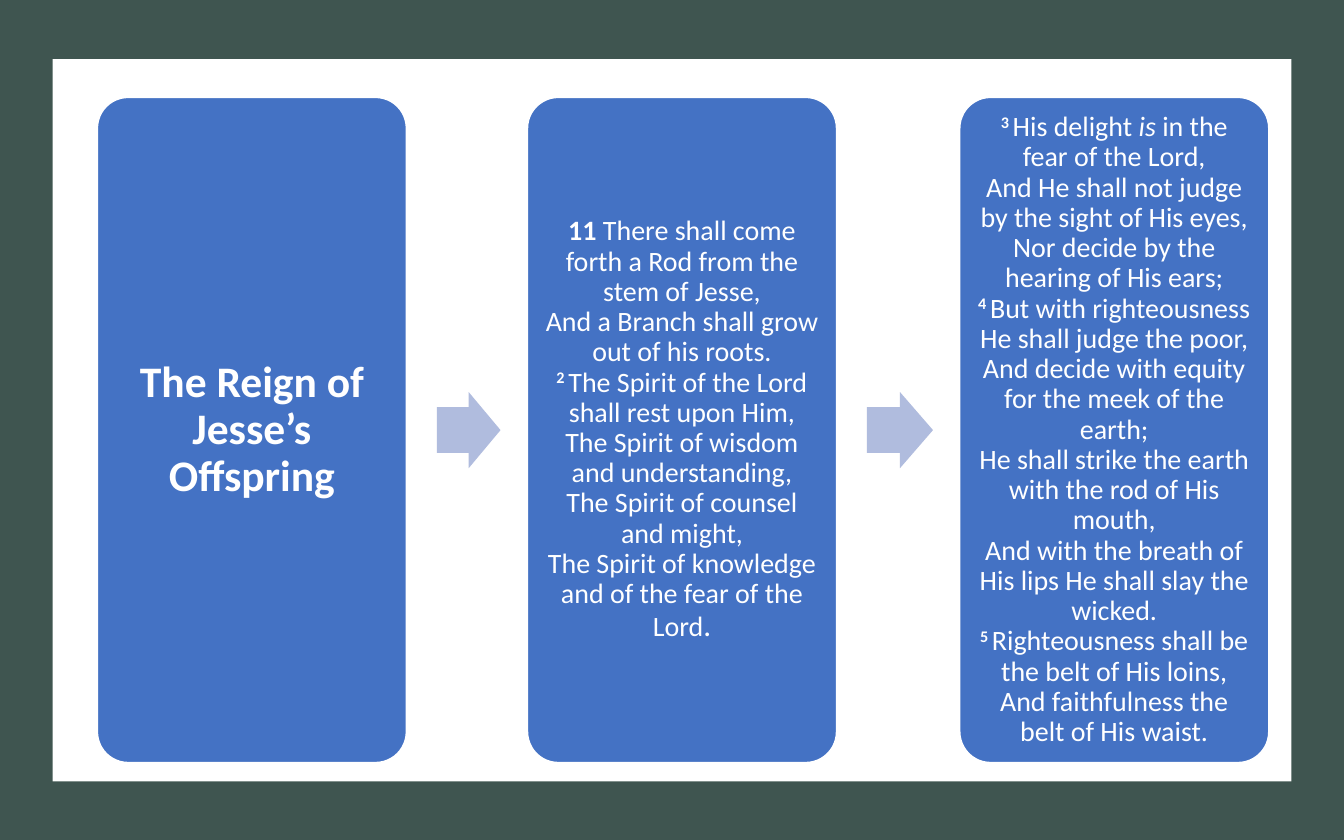
import pptx
import pptx.util
import pptx.dml.color
import pptx.enum.shapes
import pptx.enum.text

Pt = pptx.util.Pt
SHAPE = pptx.enum.shapes.MSO_SHAPE
COLORS = {"frame": "3F5550", "white": "FFFFFF", "card": "4472C4", "arrow": "B0BCDE"}
CARD_LEFTS = (62.6, 339.1, 617)
CARD_TOP, CARD_W, CARD_H = 62.6, 198.7, 427.7
ARROWS = ((280.8, 41), (557.3, 42.5))
TITLE = "The Reign of Jesse’s Offspring"
VERSES_1_2 = (
    ("11 ", {"bold": True}),
    ("There shall come forth a Rod from the stem of Jesse,\n"
     "And a Branch shall grow out of his roots.\n", {}),
    ("2 ", {"bold": True, "raised": True}),
    ("The Spirit of the Lord shall rest upon Him,\n"
     "The Spirit of wisdom and understanding,\n"
     "The Spirit of counsel and might,\n"
     "The Spirit of knowledge and of the fear of the Lord", {}),
    (".", {"size": 20}),
)
VERSES_3_5 = (
    ("3 ", {"bold": True, "raised": True}),
    ("His delight ", {}),
    ("is", {"italic": True}),
    (" in the fear of the Lord,\n"
     "And He shall not judge by the sight of His eyes,\n"
     "Nor decide by the hearing of His ears;\n", {}),
    ("4 ", {"bold": True, "raised": True}),
    ("But with righteousness He shall judge the poor,\n"
     "And decide with equity for the meek of the earth;\n"
     "He shall strike the earth with the rod of His mouth,\n"
     "And with the breath of His lips He shall slay the wicked.\n", {}),
    ("5 ", {"bold": True, "raised": True}),
    ("Righteousness shall be the belt of His loins,\n"
     "And faithfulness the belt of His waist.", {}),
)


class Deck:
    """Holds the font, the colours and the current slide."""

    def __init__(self, slide, font="Calibri"):
        self.s = slide
        self.font = font

    def color(self, name):
        return pptx.dml.color.RGBColor.from_string(COLORS[name])

    def shape(self, kind, left, top, width, height, fill, line=None, adjustments=()):
        sp = self.s.shapes.add_shape(kind, Pt(left), Pt(top), Pt(width), Pt(height))
        sp.shadow.inherit = False
        sp.fill.solid()
        sp.fill.fore_color.rgb = self.color(fill)
        if line:
            sp.line.color.rgb = self.color(line)
            sp.line.width = Pt(1)
        else:
            sp.line.fill.background()
        for i, value in enumerate(adjustments):
            sp.adjustments[i] = value
        return sp

    def card(self, left):
        return self.shape(SHAPE.ROUNDED_RECTANGLE, left, CARD_TOP, CARD_W, CARD_H,
                          "card", "white", (0.1,))

    def arrow(self, left, width):
        return self.shape(SHAPE.RIGHT_ARROW, left, 252, width, 49, "arrow",
                          adjustments=(0.6, 0.5))

    def frame_text(self, sp, inset):
        tf = sp.text_frame
        tf.word_wrap = True
        tf.auto_size = pptx.enum.text.MSO_AUTO_SIZE.NONE
        tf.vertical_anchor = pptx.enum.text.MSO_ANCHOR.MIDDLE
        tf.margin_left = tf.margin_right = tf.margin_top = tf.margin_bottom = Pt(inset)
        p = tf.paragraphs[0]
        p.alignment = pptx.enum.text.PP_ALIGN.CENTER
        p.line_spacing = 0.9
        return p

    def style(self, r, size=18, bold=False, italic=False, raised=False):
        r.font.name = self.font
        r.font.size = Pt(size)
        r.font.bold = bold
        r.font.italic = italic
        r.font.color.rgb = self.color("white")
        if raised:
            r._r.get_or_add_rPr().set("baseline", "30000")

    def verses(self, sp, parts):
        p = self.frame_text(sp, 5)
        for text, look in parts:
            for i, line in enumerate(text.split("\n")):
                if i:
                    p.add_line_break()
                if line:
                    r = p.add_run()
                    r.text = line
                    self.style(r, **look)

    def title(self, text, left, top, width, height):
        sp = self.s.shapes.title
        sp.left, sp.top, sp.width, sp.height = Pt(left), Pt(top), Pt(width), Pt(height)
        sp.text_frame.text = text
        p = self.frame_text(sp, 8.4)
        self.style(p.runs[0], size=28, bold=True)
        sp.element.getparent().append(sp.element)


def main():
    prs = pptx.Presentation()
    prs.slide_width, prs.slide_height = Pt(864), Pt(540)
    deck = Deck(prs.slides.add_slide(prs.slide_layouts[5]))
    deck.shape(SHAPE.RECTANGLE, 0, 0, 864, 540, "frame")
    deck.shape(SHAPE.RECTANGLE, 33.8, 38, 796.4, 464.4, "white")
    cards = [deck.card(left) for left in CARD_LEFTS]
    for left, width in ARROWS:
        deck.arrow(left, width)
    for sp, parts in zip(cards[1:], (VERSES_1_2, VERSES_3_5)):
        deck.verses(sp, parts)
    deck.title(TITLE, CARD_LEFTS[0] + 5.8, CARD_TOP + 5.8, CARD_W - 11.6, CARD_H - 11.6)
    prs.save("out.pptx")


if __name__ == "__main__":
    main()
